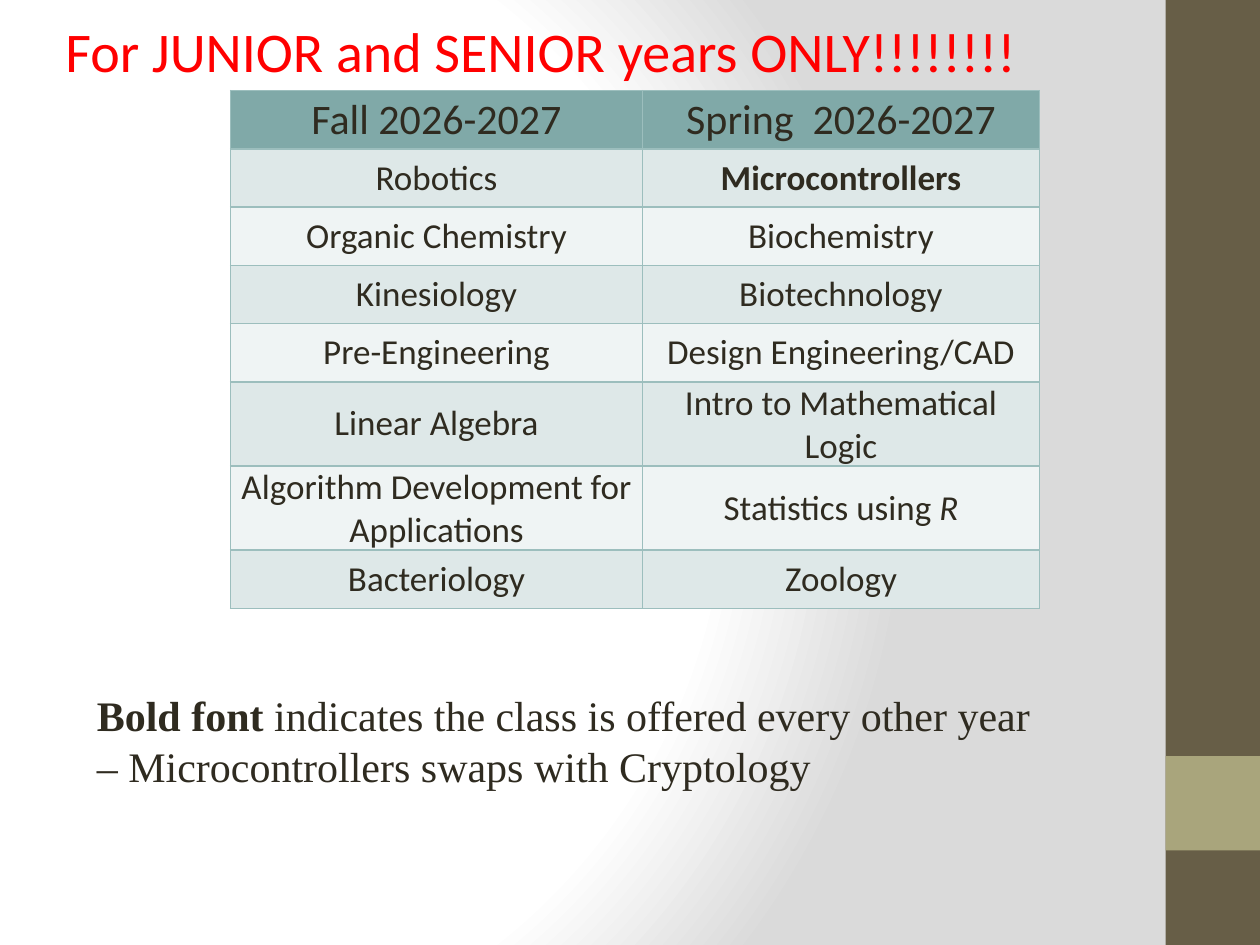
from lxml import etree
from pptx import Presentation
from pptx.dml.color import RGBColor
from pptx.enum.shapes import MSO_SHAPE
from pptx.enum.text import MSO_ANCHOR, MSO_AUTO_SIZE, PP_ALIGN
from pptx.oxml import parse_xml
from pptx.oxml.ns import nsdecls, qn
from pptx.util import Inches, Pt

RECT = MSO_SHAPE.RECTANGLE
TOP, MIDDLE = MSO_ANCHOR.TOP, MSO_ANCHOR.MIDDLE
GROW = MSO_AUTO_SIZE.SHAPE_TO_FIT_TEXT
CENTER = PP_ALIGN.CENTER

COLORS = {
    "white": "FFFFFF", "gray": "DADADA", "bar": "675E47", "accent": "A9A57C",
    "text": "2F2B20", "alert": "FF0000", "border": "9CBEBD",
    "header": "80A9A8", "odd": "DEE8E8", "even": "EFF4F4",
}
SANS, SERIF = "Calibri", "Times New Roman"
GRID = 0.25  # inches per grid column and row

# A text is a list of (words, style) runs, where style is "", "b" or "i".
COURSES = [
    ([("Fall 2026-2027", "")], [("Spring  2026-2027", "")]),
    ([("Robotics", "")], [("Microcontrollers", "b")]),
    ([("Organic Chemistry", "")], [("Biochemistry", "")]),
    ([("Kinesiology", "")], [("Biotechnology", "")]),
    ([("Pre-Engineering", "")], [("Design Engineering/CAD", "")]),
    ([("Linear Algebra", "")], [("Intro to Mathematical Logic", "")]),
    ([("Algorithm Development for Applications", "")],
     [("Statistics using ", ""), ("R", "i")]),
    ([("Bacteriology", "")], [("Zoology", "")]),
]
NOTE = [
    [("Bold font ", "b"), ("indicates the class is offered every other year", "")],
    [("– Microcontrollers swaps with Cryptology", "")],
]


def rgb(name):
    return RGBColor.from_string(COLORS[name])


def grid(*units):
    return [Inches(u * GRID) for u in units]


class SlideBuilder:
    def __init__(self, prs):
        self.s = prs.slides.add_slide(prs.slide_layouts[6])

    def background(self, stops):
        """Fill the slide with a radial gradient of (percent, color) stops."""
        fill = self.s.background.fill
        fill.gradient()
        old = self.s.element.find(".//" + qn("a:gradFill"))
        gs = "".join(
            f'<a:gs pos="{pos * 1000}"><a:srgbClr val="{COLORS[color]}"/></a:gs>'
            for pos, color in stops)
        new = parse_xml(
            f'<a:gradFill {nsdecls("a")} rotWithShape="1"><a:gsLst>{gs}</a:gsLst>'
            '<a:path path="circle"><a:fillToRect l="20000" t="50000" '
            'r="100000" b="50000"/></a:path></a:gradFill>')
        old.getparent().replace(old, new)

    def block(self, x, y, w, h, color):
        sp = self.s.shapes.add_shape(RECT, *grid(x, y, w, h))
        sp.shadow.inherit = False
        sp.fill.solid()
        sp.fill.fore_color.rgb = rgb(color)
        sp.line.fill.background()

    def add_runs(self, p, runs, size, font=SANS, color="text"):
        for words, style in runs:
            r = p.add_run()
            r.text = words
            r.font.name, r.font.size = font, Pt(size)
            r.font.bold, r.font.italic = style == "b", style == "i"
            r.font.color.rgb = rgb(color)

    def text(self, x, y, w, h, lines, size, font=SANS, color="text", anchor=TOP):
        tf = self.s.shapes.add_textbox(*grid(x, y, w, h)).text_frame
        tf.word_wrap, tf.auto_size, tf.vertical_anchor = True, GROW, anchor
        for i, runs in enumerate(lines):
            p = tf.add_paragraph() if i else tf.paragraphs[0]
            self.add_runs(p, runs, size, font, color)

    def borders(self, cell):
        tcPr = cell._tc.get_or_add_tcPr()
        for side in ("lnL", "lnR", "lnT", "lnB"):
            ln = etree.SubElement(tcPr, qn(f"a:{side}"), w=str(Pt(1)))
            fill = etree.SubElement(ln, qn("a:solidFill"))
            etree.SubElement(fill, qn("a:srgbClr"), val=COLORS["border"])

    def table(self, x, y, widths, row_h, rows):
        """Draw a table with a header row and alternating body rows."""
        size = grid(x, y, sum(widths), row_h * len(rows))
        table = self.s.shapes.add_table(len(rows), len(widths), *size).table
        for column, width in zip(table.columns, grid(*widths)):
            column.width = width
        for i, row in enumerate(rows):
            color = "header" if i == 0 else "odd" if i % 2 else "even"
            for j, runs in enumerate(row):
                cell = table.cell(i, j)
                self.borders(cell)
                cell.fill.solid()
                cell.fill.fore_color.rgb = rgb(color)
                cell.vertical_anchor = MIDDLE
                cell.margin_left = cell.margin_right = Inches(0.06)
                cell.margin_top = cell.margin_bottom = 0
                p = cell.text_frame.paragraphs[0]
                p.alignment = CENTER
                self.add_runs(p, runs, 20 if i else 24)


def main():
    prs = Presentation()
    prs.slide_width, prs.slide_height = grid(40, 30)
    b = SlideBuilder(prs)
    b.background([(0, "white"), (75, "white"), (100, "gray")])
    b.block(37, 0, 3, 30, "bar")
    b.block(37, 24, 3, 3, "accent")
    b.text(2.68, 21.68, 33.68, 3.64, NOTE, 24, SERIF, anchor=MIDDLE)
    b.table(7.32, 2.88, (13.08, 12.6), 1.85, COURSES)
    b.text(1.68, 0.32, 35.2, 2.56,
           [[("For JUNIOR and SENIOR years ONLY!!!!!!!!", "")]], 32, color="alert")
    prs.save("out.pptx")


if __name__ == "__main__":
    main()
